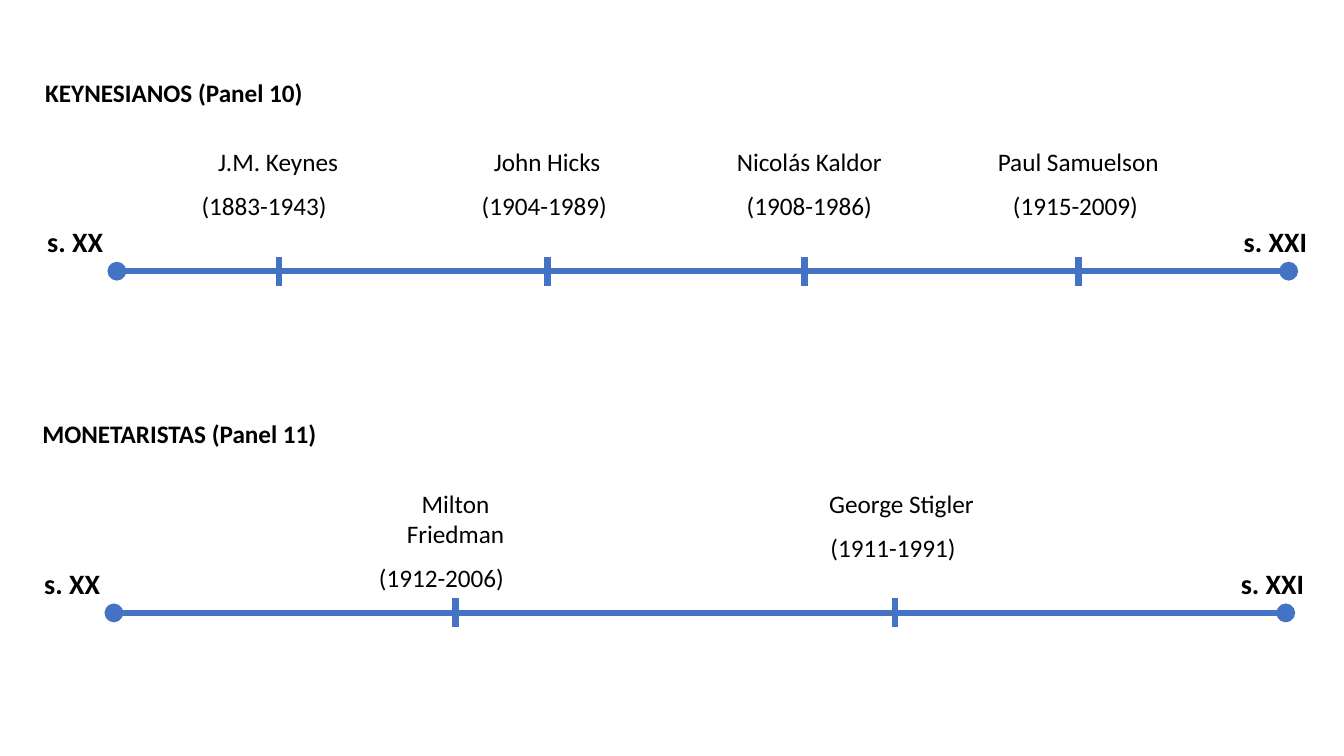
from pptx import Presentation
from pptx.dml.color import RGBColor
from pptx.enum.shapes import MSO_CONNECTOR
from pptx.enum.text import PP_ALIGN
from pptx.oxml.ns import qn
from pptx.util import Pt
from lxml.etree import SubElement

THEME = {
    "font": "Calibri",
    "text": RGBColor(0x00, 0x00, 0x00),
    "line": RGBColor(0x44, 0x72, 0xC4),
    "line_width": 4.5,
    "body_size": 18,
    "century_size": 20,
}

# name, years, box left, tick x, name indent, extra right inset
TIMELINES = [
    {
        "title": "KEYNESIANOS (Panel 10)", "title_width": 200.5,
        "left": 83.5, "axis": 193.7,
        "people": [
            ("J.M. Keynes", "(1883-1943)", 122.4, 199.4, 20, 20),
            ("John Hicks", "(1904-1989)", 312.5, 391, 4, 0),
            ("Nicolás Kaldor", "(1908-1986)", 501.8, 574.6, 0, 0),
            ("Paul Samuelson", "(1915-2009)", 691.9, 770.4, 4, 0),
        ],
    },
    {
        "title": "MONETARISTAS (Panel 11)", "title_width": 212.5,
        "left": 81.4, "axis": 437.8,
        "people": [
            ("Milton Friedman", "(1912-2006)", 249.1, 325.4, 20, 20),
            ("George Stigler", "(1911-1991)", 561.6, 639.4, 12, 0),
        ],
    },
]
# text, offset from axis start, width
CENTURIES = [("s. XX", -56.9, 59), ("s. XXI", 797.8, 65)]

AXIS_LENGTH = 837
TICK_HALF = 10.4
TITLE_OFFSET, TITLE_RISE, TITLE_HEIGHT = -58.3, 145.4, 31
CENTURY_RISE, CENTURY_HEIGHT = 40.3, 34
PERSON_RISE, PERSON_WIDTH, PERSON_HEIGHT = 92.7, 152.6, 61
INSET = 7.2


def add_text(slide, left, top, width, height, lines, size, bold=False,
             align=PP_ALIGN.LEFT, spacing=1.0):
    box = slide.shapes.add_textbox(Pt(left), Pt(top), Pt(width), Pt(height))
    frame = box.text_frame
    frame.word_wrap = True
    frame.text = "\n".join(lines)
    for paragraph in frame.paragraphs:
        paragraph.alignment = align
        paragraph.line_spacing = spacing
        paragraph.space_after = Pt(10)
        font = paragraph.runs[0].font
        font.name = THEME["font"]
        font.size = Pt(size)
        font.bold = bold
        font.color.rgb = THEME["text"]
    return frame


def add_line(slide, x1, y1, x2, y2, round_ends=False):
    connector = slide.shapes.add_connector(
        MSO_CONNECTOR.STRAIGHT, Pt(x1), Pt(y1), Pt(x2), Pt(y2))
    connector.line.color.rgb = THEME["line"]
    connector.line.width = Pt(THEME["line_width"])
    if round_ends:
        outline = connector.line._get_or_add_ln()
        for end in ("a:headEnd", "a:tailEnd"):
            SubElement(outline, qn(end), type="oval")
    SubElement(connector._element.spPr, qn("a:effectLst"))


def add_person(slide, axis, name, years, left, tick, name_indent, right_inset):
    frame = add_text(slide, left, axis - PERSON_RISE, PERSON_WIDTH, PERSON_HEIGHT,
                     [name, years], THEME["body_size"], align=PP_ALIGN.CENTER)
    frame.margin_right = Pt(INSET + right_inset)
    if name_indent:
        properties = frame.paragraphs[0]._p.get_or_add_pPr()
        properties.set("marL", str(Pt(name_indent)))
    add_line(slide, tick, axis + TICK_HALF, tick, axis - TICK_HALF)


def add_timeline(slide, timeline):
    left, axis = timeline["left"], timeline["axis"]
    add_text(slide, left + TITLE_OFFSET, axis - TITLE_RISE, timeline["title_width"],
             TITLE_HEIGHT, [timeline["title"]], THEME["body_size"], True, spacing=1.15)
    add_line(slide, left, axis, left + AXIS_LENGTH, axis, round_ends=True)
    for text, offset, width in CENTURIES:
        add_text(slide, left + offset, axis - CENTURY_RISE, width, CENTURY_HEIGHT,
                 [text], THEME["century_size"], True, spacing=1.15)
    for person in timeline["people"]:
        add_person(slide, axis, *person)


def main():
    presentation = Presentation()
    presentation.slide_width = Pt(960)
    presentation.slide_height = Pt(540)
    slide = presentation.slides.add_slide(presentation.slide_layouts[6])
    for timeline in TIMELINES:
        add_timeline(slide, timeline)
    presentation.save("out.pptx")


if __name__ == "__main__":
    main()
